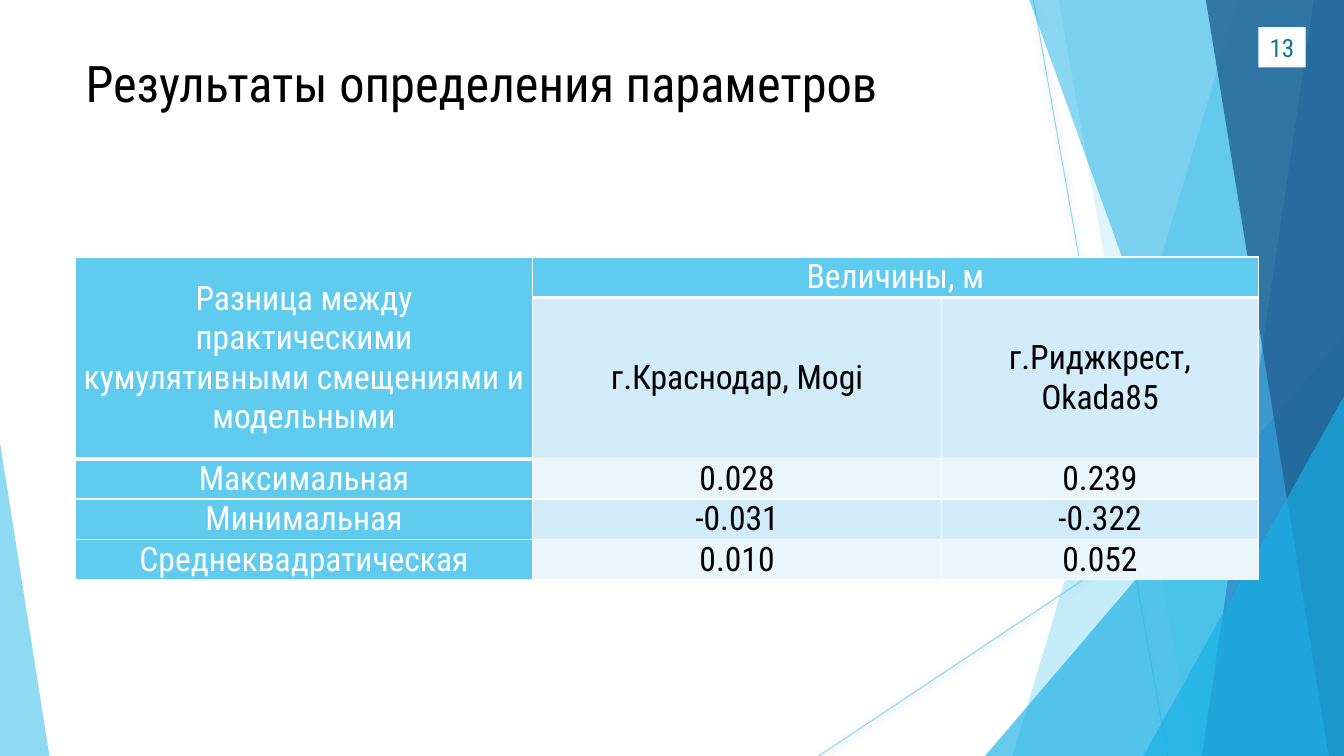
from dataclasses import dataclass

from lxml.etree import SubElement
from pptx import Presentation
from pptx.dml.color import RGBColor
from pptx.enum.shapes import MSO_CONNECTOR, MSO_SHAPE
from pptx.enum.text import MSO_ANCHOR, PP_ALIGN
from pptx.oxml.ns import qn
from pptx.slide import Slide
from pptx.table import _Cell
from pptx.text.text import TextFrame
from pptx.util import Inches, Pt

WIDTH, HEIGHT = 13.33, 7.5
FONT = "Roboto Condensed"
COLORS = {
    "white": "FFFFFF", "black": "000000", "sky": "5FCBEF", "azure": "17B0E4",
    "blue": "2E83C3", "navy": "226292", "teal": "0F7698",
    "band_dark": "D2ECF9", "band_light": "EAF6FC",
}


@dataclass
class Ray:
    start: tuple[float, float]
    end: tuple[float, float]


@dataclass
class Panel:
    """A band reaching the right edge, with a slanted left side."""
    top_x: float
    bottom_x: float
    color: str
    opacity: int


@dataclass
class Wedge:
    """A right triangle standing on the bottom edge."""
    left: float
    top: float
    width: float
    apex: float
    color: str
    opacity: int


@dataclass
class Shadow:
    opacity: int
    blur: float
    distance: float
    angle: int


@dataclass
class Entry:
    row: int
    column: int
    text: str


RAYS = [Ray((10.25, 0), (11.58, HEIGHT)), Ray((WIDTH, 4.03), (8.12, HEIGHT))]
FACETS = [
    Panel(12.28, 10.04, "sky", 36),
    Panel(10.5, 11.83, "sky", 20),
    Wedge(9.77, 3.33, 3.56, 1, "azure", 66),
    Panel(10.21, 12.91, "azure", 50),
    Panel(13.03, 11.92, "blue", 70),
    Panel(11.96, 13.18, "navy", 80),
    Wedge(11.34, 3.93, 1.99, 1, "azure", 66),
    Wedge(0, 4.39, 0.49, 0, "sky", 70),
]
RAY_SHADOW = Shadow(32, 5, 1, 90)

COLUMN_WIDTHS = [4.53, 4.06, 3.14]
ROW_HEIGHTS = [0.4, 1.2, 0.4, 0.4, 0.4]
ENTRIES = [
    Entry(0, 0, "Разница между практическими кумулятивными смещениями и модельными"),
    Entry(0, 1, "Величины, м"),
    Entry(1, 1, "г.Краснодар, Mogi"),
    Entry(1, 2, "г.Риджкрест, Okada85"),
    Entry(2, 0, "Максимальная"), Entry(2, 1, "0.028"), Entry(2, 2, "0.239"),
    Entry(3, 0, "Минимальная"), Entry(3, 1, "-0.031"), Entry(3, 2, "-0.322"),
    Entry(4, 0, "Среднеквадратическая"), Entry(4, 1, "0.010"), Entry(4, 2, "0.052"),
]


def rgb(name: str) -> RGBColor:
    return RGBColor.from_string(COLORS[name])


def set_opacity(fill_parent, percent: int) -> None:
    color = fill_parent.find(f"{qn('a:solidFill')}/{qn('a:srgbClr')}")
    SubElement(color, qn("a:alpha"), val=str(percent * 1000))


def add_shadow(properties, shadow: Shadow) -> None:
    effects = SubElement(properties, qn("a:effectLst"))
    outer = SubElement(
        effects, qn("a:outerShdw"), blurRad=str(Pt(shadow.blur)),
        dist=str(Pt(shadow.distance)), dir=str(shadow.angle * 60000),
        algn="ctr", rotWithShape="0")
    color = SubElement(outer, qn("a:srgbClr"), val=COLORS["black"])
    SubElement(color, qn("a:alpha"), val=str(shadow.opacity * 1000))


def write(frame: TextFrame, text: str, size: int, color: str,
          align: PP_ALIGN = PP_ALIGN.CENTER) -> None:
    paragraph = frame.paragraphs[0]
    paragraph.text = text
    paragraph.alignment = align
    paragraph.font.name = FONT
    paragraph.font.size = Pt(size)
    paragraph.font.bold = False
    paragraph.font.color.rgb = rgb(color)


def draw_ray(page: Slide, ray: Ray) -> None:
    points = [Inches(value) for value in (*ray.start, *ray.end)]
    line = page.shapes.add_connector(MSO_CONNECTOR.STRAIGHT, *points)
    line.line.width = Pt(0.75)
    line.line.color.rgb = rgb("sky")
    properties = line._element.spPr
    set_opacity(properties.find(qn("a:ln")), 70)
    add_shadow(properties, RAY_SHADOW)


def draw_facet(page: Slide, facet: Panel | Wedge) -> None:
    if isinstance(facet, Panel):
        builder = page.shapes.build_freeform(Inches(facet.top_x), 0)
        corners = [(WIDTH, 0), (WIDTH, HEIGHT), (facet.bottom_x, HEIGHT)]
        builder.add_line_segments([(Inches(x), Inches(y)) for x, y in corners])
        shape = builder.convert_to_shape()
    else:
        shape = page.shapes.add_shape(
            MSO_SHAPE.ISOSCELES_TRIANGLE, Inches(facet.left), Inches(facet.top),
            Inches(facet.width), Inches(HEIGHT - facet.top))
        shape.adjustments[0] = facet.apex
    shape.shadow.inherit = False
    shape.line.fill.background()
    shape.fill.solid()
    shape.fill.fore_color.rgb = rgb(facet.color)
    set_opacity(shape._element.spPr, facet.opacity)


def draw_title(page: Slide) -> None:
    box = page.shapes.add_textbox(Inches(0.75), Inches(0.47), Inches(9.4), Inches(0.8))
    box.text_frame.word_wrap = True
    write(box.text_frame, "Результаты определения параметров", 36, "black", PP_ALIGN.LEFT)


def draw_page_number(page: Slide) -> None:
    badge = page.shapes.add_shape(
        MSO_SHAPE.RECTANGLE, Inches(12.48), Inches(0.27), Inches(0.47), Inches(0.4))
    badge.shadow.inherit = False
    badge.line.fill.background()
    badge.fill.solid()
    badge.fill.fore_color.rgb = rgb("white")
    badge.text_frame.vertical_anchor = MSO_ANCHOR.MIDDLE
    badge.text_frame.margin_left = badge.text_frame.margin_right = 0
    write(badge.text_frame, "13", 18, "teal")


def set_borders(cell: _Cell, row: int, column: int) -> None:
    """Draw white rules, thicker below the headings."""
    thick = row == 0 or (row, column) == (1, 0)
    widths = {"L": 1, "R": 1, "T": 1, "B": 3 if thick else 1}
    if row > 0:
        del widths["T"]
    properties = cell._tc.get_or_add_tcPr()
    for side, width in widths.items():
        line = SubElement(properties, qn(f"a:ln{side}"), w=str(Pt(width)))
        fill = SubElement(line, qn("a:solidFill"))
        SubElement(fill, qn("a:srgbClr"), val=COLORS["white"])


def draw_table(page: Slide) -> None:
    table = page.shapes.add_table(
        len(ROW_HEIGHTS), len(COLUMN_WIDTHS), Inches(0.75), Inches(2.55),
        Inches(sum(COLUMN_WIDTHS)), Inches(sum(ROW_HEIGHTS))).table
    table.first_row = table.horz_banding = False
    for column, width in zip(table.columns, COLUMN_WIDTHS):
        column.width = Inches(width)
    for row, height in zip(table.rows, ROW_HEIGHTS):
        row.height = Inches(height)
    for index, cell in enumerate(table.iter_cells()):
        row, column = divmod(index, len(COLUMN_WIDTHS))
        heading = row == 0 or column == 0
        set_borders(cell, row, column)
        cell.fill.solid()
        band = "band_dark" if row % 2 else "band_light"
        cell.fill.fore_color.rgb = rgb("sky" if heading else band)
        cell.vertical_anchor = MSO_ANCHOR.MIDDLE
        cell.margin_left = cell.margin_right = Pt(5.5)
        cell.margin_top = cell.margin_bottom = 0
    table.cell(0, 0).merge(table.cell(1, 0))
    table.cell(0, 1).merge(table.cell(0, 2))
    for entry in ENTRIES:
        color = "white" if entry.row == 0 or entry.column == 0 else "black"
        write(table.cell(entry.row, entry.column).text_frame, entry.text, 24, color)


def main() -> None:
    deck = Presentation()
    deck.slide_width, deck.slide_height = Inches(WIDTH), Inches(HEIGHT)
    page = deck.slides.add_slide(deck.slide_layouts[6])
    for ray in RAYS:
        draw_ray(page, ray)
    for facet in FACETS:
        draw_facet(page, facet)
    draw_title(page)
    draw_page_number(page)
    draw_table(page)
    deck.save("out.pptx")


if __name__ == "__main__":
    main()
